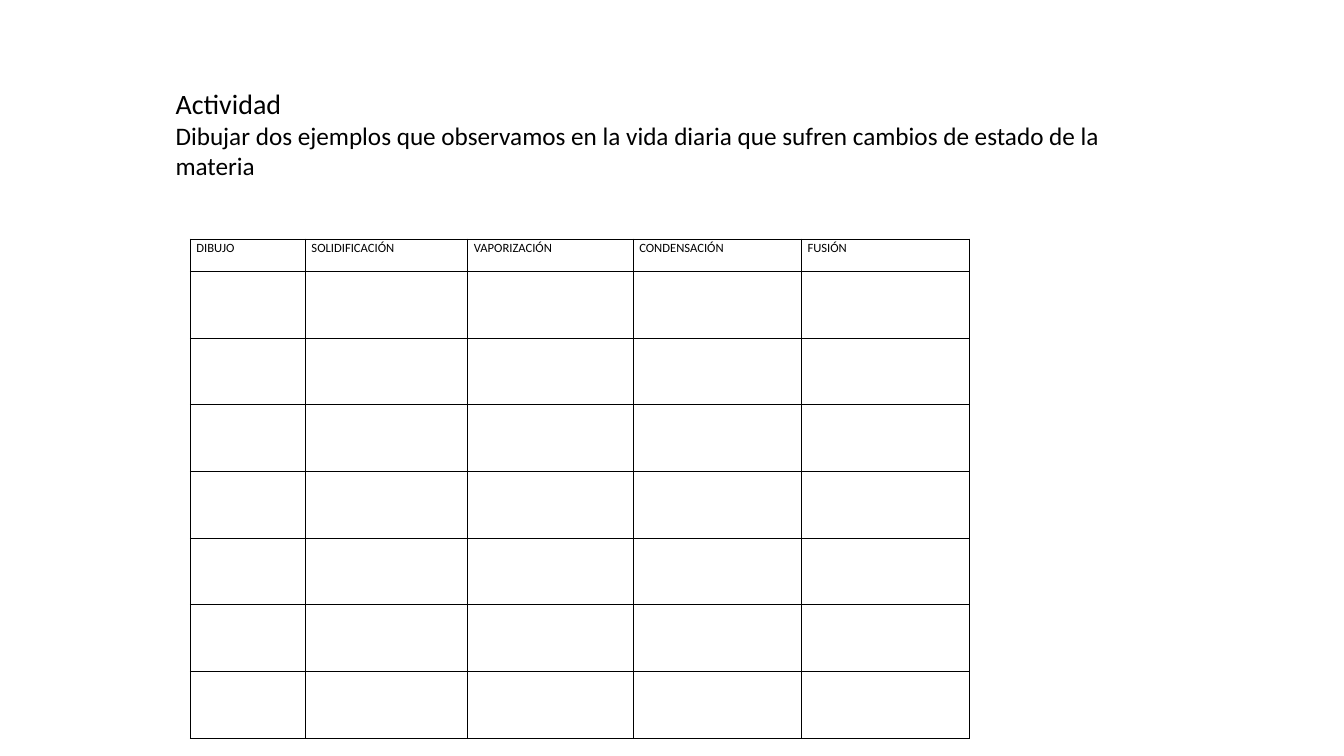
"""Build the activity slide with a drawing grid for the changes of state of matter."""
import lxml.etree
import pptx
import pptx.dml.color
import pptx.enum.text
import pptx.oxml.ns
import pptx.util

Cm = pptx.util.Cm
Pt = pptx.util.Pt
qn = pptx.oxml.ns.qn

BLACK = pptx.dml.color.RGBColor(0x00, 0x00, 0x00)
FONT = "Calibri"

INSTRUCTIONS = [
    ("Actividad", 20),
    ("Dibujar dos ejemplos que observamos en la vida diaria "
     "que sufren cambios de estado de la materia", 18),
]
COLUMNS = {
    "DIBUJO": 2.9,
    "SOLIDIFICACIÓN": 4.09,
    "VAPORIZACIÓN": 4.17,
    "CONDENSACIÓN": 4.24,
    "FUSIÓN": 4.24,
}
DRAWING_ROWS = 7
HEADER_HEIGHT = 0.81
DRAWING_HEIGHT = 1.68

HEADING_PLACE = {"left": Cm(4.17), "top": Cm(2.06), "width": Cm(25.53), "height": Cm(3.43)}
HEADING_FRAME = {
    "auto_size": pptx.enum.text.MSO_AUTO_SIZE.NONE,
    "vertical_anchor": pptx.enum.text.MSO_ANCHOR.TOP,
    "word_wrap": True,
}
CELL_MARGINS = {
    "margin_left": Cm(0.15), "margin_right": Cm(0.15),
    "margin_top": Cm(0), "margin_bottom": Cm(0),
}
PLAIN_TABLE = {"first_row": False, "horz_banding": False}


def apply_format(target, values):
    """Set each named attribute of the target."""
    for name, value in values.items():
        setattr(target, name, value)


def write_line(paragraph, wording, size, spacing):
    """Fill a paragraph with one left-aligned black run."""
    apply_format(paragraph, {
        "alignment": pptx.enum.text.PP_ALIGN.LEFT, "line_spacing": spacing})
    line = paragraph.add_run()
    line.text = wording
    apply_format(line.font, {"name": FONT, "size": Pt(size), "bold": False})
    line.font.color.rgb = BLACK


def write_heading(heading):
    """Place the title and write the instructions in it."""
    apply_format(heading, HEADING_PLACE)
    frame = heading.text_frame
    apply_format(frame, HEADING_FRAME)
    for index, (wording, size) in enumerate(INSTRUCTIONS):
        paragraph = frame.add_paragraph() if index else frame.paragraphs[0]
        write_line(paragraph, wording, size, 1.0)


def outline_cell(cell):
    """Give a cell thin black borders on all sides and no fill."""
    properties = cell._tc.get_or_add_tcPr()
    for side in ("a:lnL", "a:lnR", "a:lnT", "a:lnB"):
        border = lxml.etree.SubElement(properties, qn(side), w=str(Pt(1)))
        paint = lxml.etree.SubElement(border, qn("a:solidFill"))
        lxml.etree.SubElement(paint, qn("a:srgbClr"), val=str(BLACK))
    cell.fill.background()


def add_drawing_grid(slide):
    """Add the table with one header row and empty rows for drawings."""
    heights = [HEADER_HEIGHT] + [DRAWING_HEIGHT] * DRAWING_ROWS
    grid = slide.shapes.add_table(
        len(heights), len(COLUMNS), Cm(4.8), Cm(6.03),
        Cm(sum(COLUMNS.values())), Cm(sum(heights))).table
    apply_format(grid, PLAIN_TABLE)
    for column, width in zip(grid.columns, COLUMNS.values()):
        column.width = Cm(width)
    for row, height in zip(grid.rows, heights):
        row.height = Cm(height)
    for cell in grid.iter_cells():
        apply_format(cell, CELL_MARGINS)
        outline_cell(cell)
    for cell, state_change in zip(grid.rows[0].cells, COLUMNS):
        write_line(cell.text_frame.paragraphs[0], state_change, 9, 1.07)


def main():
    """Create the presentation and save it."""
    presentation = pptx.Presentation()
    apply_format(presentation, {"slide_width": Cm(33.87), "slide_height": Cm(19.05)})
    slide = presentation.slides.add_slide(presentation.slide_layouts[5])
    write_heading(slide.shapes.title)
    add_drawing_grid(slide)
    presentation.save("out.pptx")


if __name__ == "__main__":
    main()
